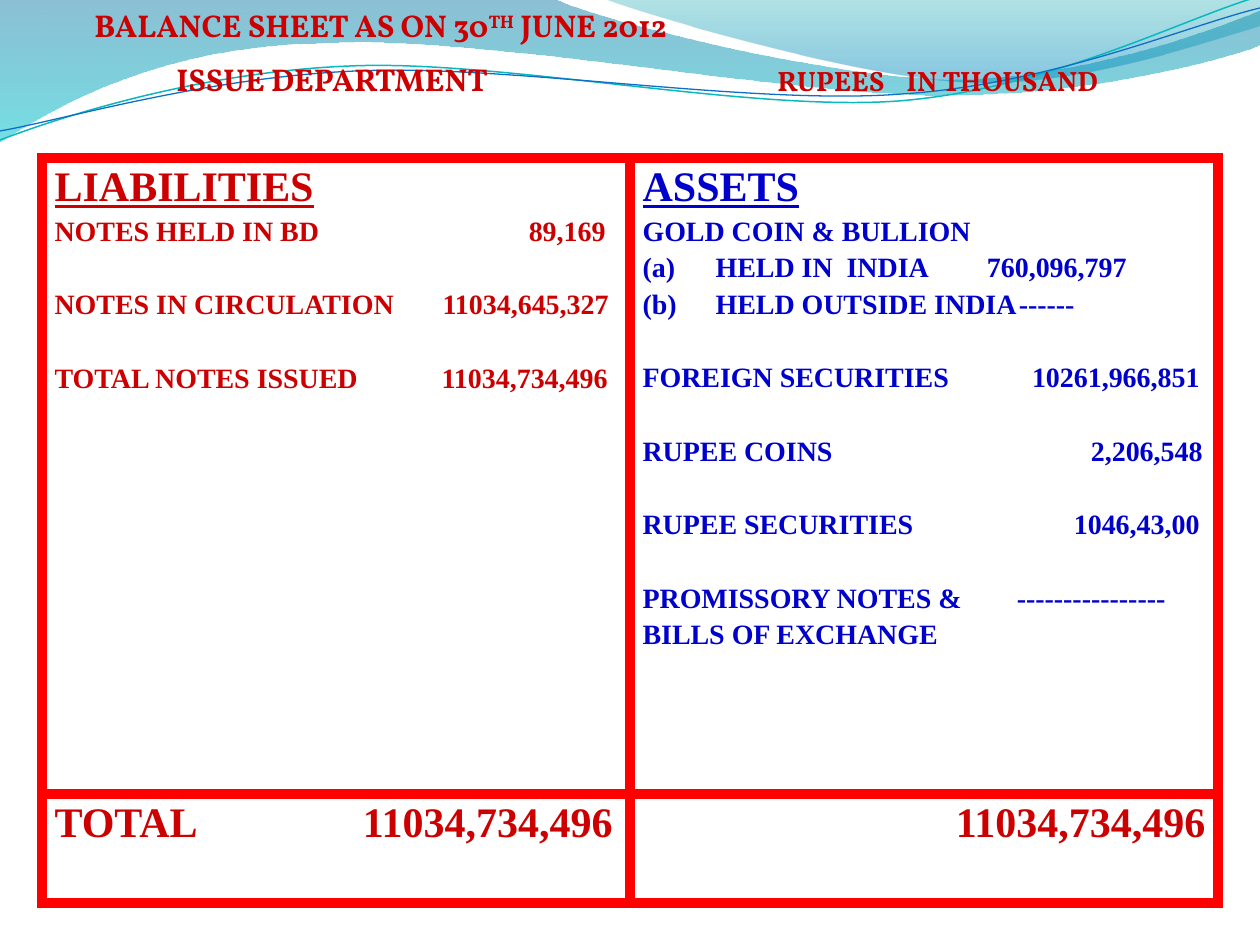
from lxml import etree
from pptx import Presentation, util as u
from pptx.dml.color import RGBColor
from pptx.enum import text
from pptx.oxml.ns import qn

SCALE = 914400 / 126
COLORS = {"red": "CC0000", "blue": "0000CC", "border": "FF0000",
          "teal": "0AB8BF", "azure": "0F6FC6"}
SERIF, DISPLAY = "Times New Roman", "Vollkorn"
LINE_GAP, BLOCK_GAP = 3.1, 24.2
INDENT = 73

LIABILITIES = [("NOTES HELD IN BD", "89,169", 551, LINE_GAP),
               ("NOTES IN CIRCULATION", "11034,645,327", 554, BLOCK_GAP),
               ("TOTAL NOTES ISSUED", "11034,734,496", 553, BLOCK_GAP)]
GOLD = [("HELD IN  INDIA", "760,096,797", 557 - INDENT, LINE_GAP),
        ("HELD OUTSIDE INDIA", "------", 505 - INDENT, LINE_GAP)]
ASSETS = [("FOREIGN SECURITIES", "10261,966,851", 557, BLOCK_GAP),
          ("RUPEE COINS", "2,206,548", 560, BLOCK_GAP),
          ("RUPEE SECURITIES", "1046,43,00", 557, BLOCK_GAP),
          ("PROMISSORY NOTES &", "----------------", 523, BLOCK_GAP)]

WAVES = [
    ([(0, 0), (554, -1), (600, 21, 837, 79, 955, 79), (1074, 79, 1207, 33, 1260, 11),
      (1261, 45), (1239, 55, 1096, 96, 940, 95), (784, 95, 481, 35, 324, 43),
      (163, 45, 58, 105, -1, 142)],
     [(0, "0074A1", 45), (1, "00C6CF", 55)]),
    ([(604, -1), (641, 14, 859, 78, 969, 82), (1079, 87, 1211, 40, 1260, 26), (1260, 0)],
     [(0, "00A1A9", 30), (0.8, "008BBF", 45)]),
]
STRANDS = [
    ([(0, 140), (60, 117, 199, 72, 349, 66), (498, 59, 747, 112, 898, 101),
      (1050, 89, 1182, 19, 1257, -3)], "teal", 0.85),
    ([(0, 131), (59, 121, 207, 77, 357, 71), (508, 64, 752, 106, 903, 94),
      (1053, 84, 1186, 26, 1260, 8)], "azure", 0.75),
]


def px(length):
    """Turn pixels into EMU."""
    return u.Emu(round(length * SCALE))


def rgb(name):
    """Look up a named colour."""
    return RGBColor.from_string(COLORS[name])


def add_outline(page, steps, close):
    """Draw a freeform whose six-number steps are cubic curves."""
    points = [(px(x), px(y)) for step in steps for x, y in zip(step[::2], step[1::2])]
    builder = page.shapes.build_freeform(*points[0], scale=1.0)
    builder.add_line_segments(points[1:], close=close)
    shape = builder.convert_to_shape()
    shape.shadow.inherit = False
    segments = iter(list(shape._element.iter(qn("a:lnTo"))))
    for step in steps[1:]:
        first = next(segments)
        if len(step) == 6:
            first.tag = qn("a:cubicBezTo")
            for _ in range(2):
                extra = next(segments)
                first.append(extra[0])
                extra.getparent().remove(extra)
    return shape


def add_wave(page, steps, stops):
    """Draw a band filled with a translucent vertical gradient."""
    wave = add_outline(page, steps, True)
    wave.line.fill.background()
    wave.fill.gradient()
    wave.fill.gradient_angle = 270
    for stop, (position, color, _) in zip(wave.fill.gradient_stops, stops):
        stop.position = position
        stop.color.rgb = RGBColor.from_string(color)
    for node, (_, _, opacity) in zip(wave._element.iter(qn("a:srgbClr")), stops):
        etree.SubElement(node, qn("a:alpha"), val=str(opacity * 1000))


def add_strand(page, steps, color, width):
    """Draw a thin curved line."""
    strand = add_outline(page, steps, False)
    strand.fill.background()
    strand.line.color.rgb = rgb(color)
    strand.line.width = u.Pt(width)


def add_span(para, words, size, color, font=SERIF, underline=False):
    """Add one bold run."""
    span = para.add_run()
    span.text = words
    span.font.name, span.font.size = font, u.Pt(size)
    span.font.bold, span.font.underline = True, underline
    span.font.color.rgb = rgb(color)
    return span


def add_para(frame, gap=LINE_GAP):
    """Start a paragraph, using the empty first one if it is free."""
    first = frame.paragraphs[0]
    para = frame.add_paragraph() if first.runs else first
    para.space_before = u.Pt(gap)
    return para


def set_tabs(para, stops, align="l"):
    """Set tab stops on a paragraph."""
    tabs = etree.SubElement(para._p.get_or_add_pPr(), qn("a:tabLst"))
    for stop in stops:
        etree.SubElement(tabs, qn("a:tab"), pos=str(px(stop)), algn=align)


def add_entry(frame, entry, color, size=16, numbered=False):
    """Add a label with its value aligned at a right tab."""
    label, value, stop, gap = entry
    para = add_para(frame, gap)
    if numbered:
        props = para._p.get_or_add_pPr()
        props.set("marL", str(px(INDENT)))
        props.set("indent", str(px(-INDENT)))
        etree.SubElement(props, qn("a:buFont"), typeface=SERIF)
        etree.SubElement(props, qn("a:buAutoNum"), type="alphaLcParenBoth")
    set_tabs(para, [stop], "r")
    add_span(para, f"{label}\t{value}", size, color)


def add_title(page):
    """Add the two heading lines."""
    box = page.shapes.add_textbox(0, 0, px(1260), px(108))
    frame = box.text_frame
    frame.word_wrap = True
    para = add_para(frame, 0)
    set_tabs(para, [82])
    add_span(para, "\tBALANCE SHEET AS ON 30", 18, "red", DISPLAY)
    raised = add_span(para, "TH", 18, "red", DISPLAY)
    raised.font._element.set("baseline", "30000")
    add_span(para, " JUNE 2012", 18, "red", DISPLAY)
    para = add_para(frame, 9)
    set_tabs(para, [164, 765, 894])
    add_span(para, "\tISSUE DEPARTMENT\t", 18, "red", DISPLAY)
    add_span(para, "RUPEES\tIN THOUSAND", 16, "red", DISPLAY)


def style_cell(cell):
    """Clear the fill and draw thick borders."""
    cell.fill.background()
    props = cell._tc.get_or_add_tcPr()
    for index, side in enumerate(("lnL", "lnR", "lnT", "lnB")):
        line = etree.Element(qn(f"a:{side}"), w=str(u.Pt(6)))
        fill = etree.SubElement(line, qn("a:solidFill"))
        etree.SubElement(fill, qn("a:srgbClr"), val=COLORS["border"])
        props.insert(index, line)


def add_balance_table(page):
    """Add the table of liabilities and assets."""
    table = page.shapes.add_table(2, 2, px(42), px(158), px(1176), px(745)).table
    table.first_row = table.horz_banding = False
    for column in table.columns:
        column.width = px(588)
    for row, height in zip(table.rows, (636, 109)):
        row.height = px(height)
    for cell in table.iter_cells():
        style_cell(cell)
    left, right = (table.cell(0, column).text_frame for column in (0, 1))
    add_span(add_para(left), "LIABILITIES", 24, "red", underline=True)
    for entry in LIABILITIES:
        add_entry(left, entry, "red")
    add_span(add_para(right), "ASSETS", 24, "blue", underline=True)
    add_span(add_para(right), "GOLD COIN & BULLION", 16, "blue")
    for entry in GOLD:
        add_entry(right, entry, "blue", numbered=True)
    for entry in ASSETS:
        add_entry(right, entry, "blue")
    add_span(add_para(right), "BILLS OF EXCHANGE", 16, "blue")
    add_entry(table.cell(1, 0).text_frame, ("TOTAL", "11034,734,496", 558, LINE_GAP), "red", 24)
    total = add_para(table.cell(1, 1).text_frame)
    total.alignment = text.PP_ALIGN.RIGHT
    add_span(total, "11034,734,496", 24, "red")


def main():
    """Build the balance sheet slide."""
    deck = Presentation()
    deck.slide_width, deck.slide_height = px(1260), px(945)
    page = deck.slides.add_slide(deck.slide_layouts[6])
    for wave in WAVES:
        add_wave(page, *wave)
    for strand in STRANDS:
        add_strand(page, *strand)
    add_title(page)
    add_balance_table(page)
    deck.save("out.pptx")


if __name__ == "__main__":
    main()
